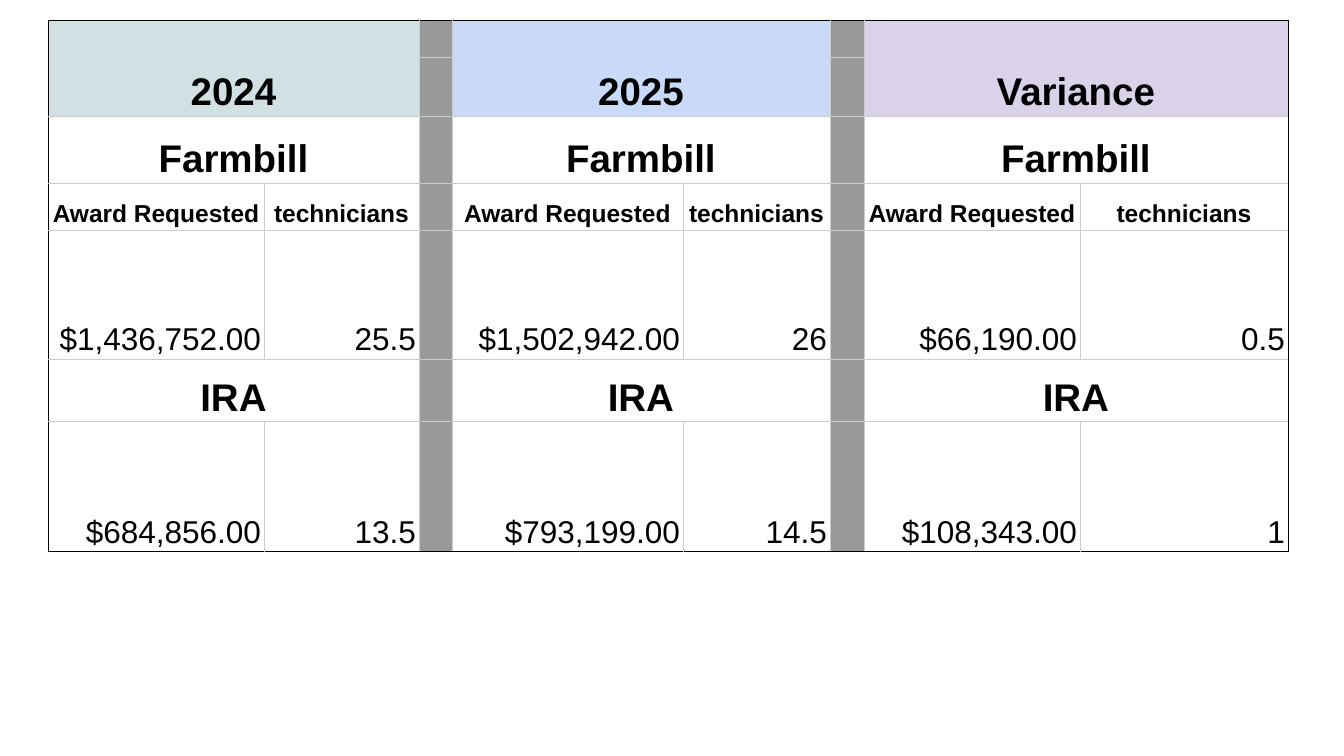
import pptx
import pptx.dml.color
import pptx.enum.text
import pptx.oxml
import pptx.oxml.ns
import pptx.util

PX = 914400 // 84
ALIGN = pptx.enum.text.PP_ALIGN
BLACK, GRID, GAP = "000000", "CCCCCC", "999999"
COLUMNS = [216, 155, 33, 231, 147, 34, 216, 208]
ROWS = [37, 59, 67, 47, 129, 63, 130]

# Title, fill, Farmbill award and technicians, IRA award and technicians
GROUPS = [
    ("2024", "D0E0E3", ("$1,436,752.00", "25.5"), ("$684,856.00", "13.5")),
    ("2025", "C9DAF8", ("$1,502,942.00", "26"), ("$793,199.00", "14.5")),
    ("Variance", "D9D2E9", ("$66,190.00", "0.5"), ("$108,343.00", "1")),
]


def px(n):
    return pptx.util.Emu(n * PX)


def rgb(value):
    return pptx.dml.color.RGBColor.from_string(value)


def write(cell, text, size, bold=True, align=ALIGN.CENTER):
    p = cell.text_frame.paragraphs[0]
    p.text = text
    p.alignment = align
    p.line_spacing = 1.15
    font = p.runs[0].font
    font.name, font.size, font.bold = "Arial", pptx.util.Pt(size), bold
    font.color.rgb = rgb(BLACK)


def add_borders(cell, **sides):
    tcPr = cell._tc.get_or_add_tcPr()
    for side, color in sides.items():
        tcPr.append(pptx.oxml.parse_xml(
            f'<a:ln{side} {pptx.oxml.ns.nsdecls("a")} w="9525"><a:solidFill>'
            f'<a:srgbClr val="{color}"/></a:solidFill></a:ln{side}>'))


def style_cells(table):
    """Black outer frame, light inner grid, text at the bottom."""
    for row in range(len(ROWS)):
        for col in range(len(COLUMNS)):
            cell = table.cell(row, col)
            cell.margin_left = cell.margin_right = px(3)
            cell.margin_top = cell.margin_bottom = px(2)
            cell.vertical_anchor = pptx.enum.text.MSO_ANCHOR.BOTTOM
            cell.fill.background()
            if cell.is_spanned:
                continue
            width = cell.span_width if cell.is_merge_origin else 1
            add_borders(
                cell,
                L=BLACK if col == 0 else GRID,
                R=BLACK if col + width == len(COLUMNS) else GRID,
                T=BLACK if row == 0 else GRID,
                B=BLACK if row == len(ROWS) - 1 else GRID)
            # Fill follows the border elements
            fill = cell._tc.tcPr.find(pptx.oxml.ns.qn("a:noFill"))
            cell._tc.tcPr.append(fill)


def fill_group(table, col, title, color, farmbill, ira):
    """Two columns: merged headings with value pairs below them."""
    for row, last, text in ((0, 1, title), (2, 2, "Farmbill"), (5, 5, "IRA")):
        heading = table.cell(row, col)
        heading.merge(table.cell(last, col + 1))
        write(heading, text, 33)
    for i, label in enumerate(("Award Requested", "technicians")):
        write(table.cell(3, col + i), label, 21)
        write(table.cell(4, col + i), farmbill[i], 27, False, ALIGN.RIGHT)
        write(table.cell(6, col + i), ira[i], 27, False, ALIGN.RIGHT)


def paint(cell, color):
    cell.fill.solid()
    cell.fill.fore_color.rgb = rgb(color)


def add_award_table(s, left, top):
    table = s.shapes.add_table(
        len(ROWS), len(COLUMNS), px(left), px(top),
        px(sum(COLUMNS)), px(sum(ROWS))).table
    table.first_row = table.horz_banding = False
    for column, width in zip(table.columns, COLUMNS):
        column.width = px(width)
    for row, height in zip(table.rows, ROWS):
        row.height = px(height)

    for i, group in enumerate(GROUPS):
        fill_group(table, 3 * i, *group)
    style_cells(table)

    # Group title fills and grey separator columns
    for i, group in enumerate(GROUPS):
        paint(table.cell(0, 3 * i), group[1])
    for col in (2, 5):
        for row in range(len(ROWS)):
            paint(table.cell(row, col), GAP)


def main():
    prs = pptx.Presentation()
    prs.slide_width, prs.slide_height = px(1344), px(756)
    s = prs.slides.add_slide(prs.slide_layouts[6])
    add_award_table(s, 48, 20)
    prs.save("out.pptx")


if __name__ == "__main__":
    main()
